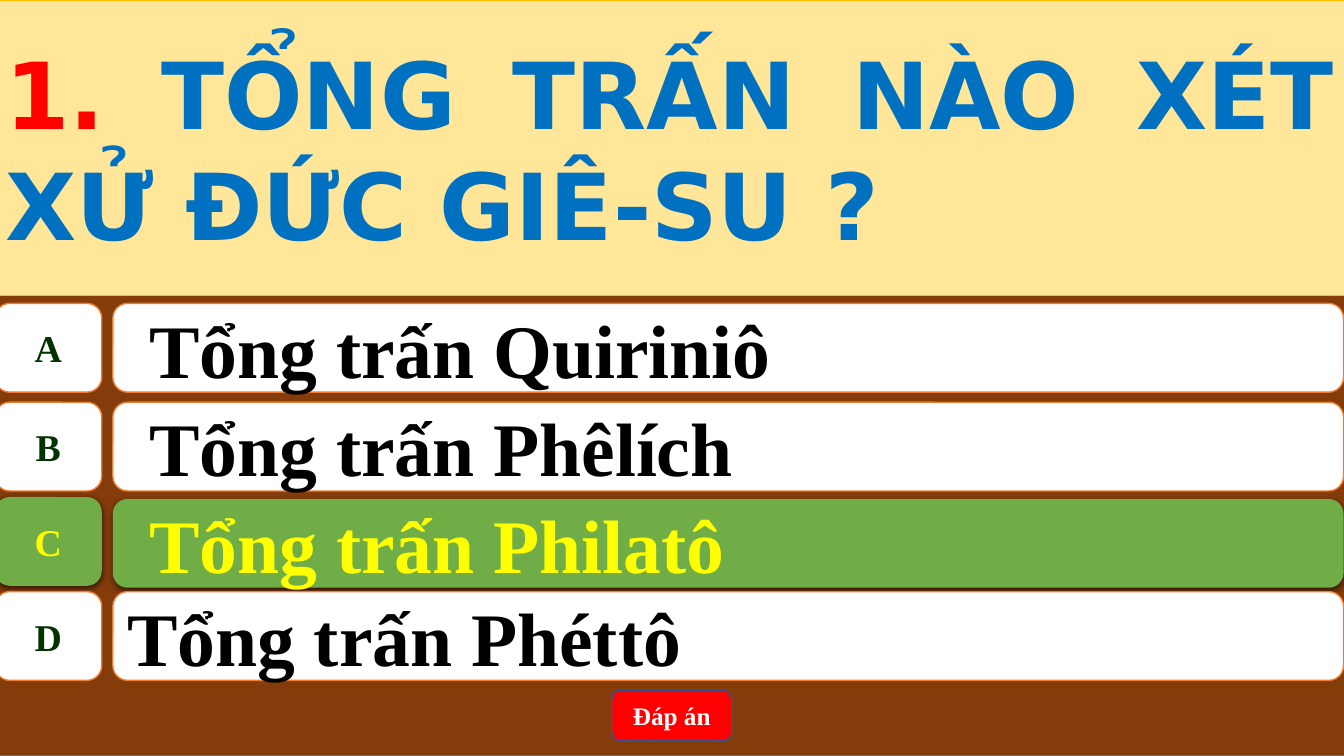
from lxml.etree import SubElement as Sub
from pptx import Presentation
from pptx.dml.color import RGBColor
from pptx.enum.shapes import MSO_SHAPE as Kind
from pptx.enum.text import MSO_ANCHOR as Anchor, MSO_AUTO_SIZE as Auto, PP_ALIGN as Align
from pptx.oxml.ns import qn
from pptx.util import Pt

BROWN = RGBColor(0x84, 0x3C, 0x0B)
STEEL = RGBColor(0x43, 0x73, 0x9E)
CREAM = RGBColor(0xFF, 0xE6, 0x99)
GOLD = RGBColor(0xFF, 0xC0, 0x00)
ORANGE = RGBColor(0xED, 0x7D, 0x31)
WHITE = RGBColor(0xFF, 0xFF, 0xFF)
BLACK = RGBColor(0, 0, 0)
DARK = RGBColor(0x00, 0x33, 0x00)
GREEN = RGBColor(0x70, 0xAD, 0x47)
YELLOW = RGBColor(0xFF, 0xFF, 0x00)
RED = RGBColor(0xFF, 0x00, 0x00)
BLUE = RGBColor(0x00, 0x70, 0xC0)
NAVY = RGBColor(0x32, 0x54, 0x91)
SERIF, SANS = "Times New Roman", "DejaVu Sans"

LEFT, WIDE = -3.6, 964
ROW, BADGE, GAP = 63.4, 76.3, 7.9
# letter, answer, top, drop of the answer bar, indented, correct
ROWS = [
    ("A", "Tổng trấn Quiriniô", 216.7, 0, True, False),
    ("B", "Tổng trấn Phêlích", 287.3, 0, True, False),
    ("C", "Tổng trấn Philatô", 355, 1.4, True, True),
    ("D", "Tổng trấn Phéttô", 422.6, 0, False, False),
]


def paint(shape, fill, line=None, width=1):
    shape.fill.solid()
    shape.fill.fore_color.rgb = fill
    if line is None:
        shape.line.fill.background()
    else:
        shape.line.color.rgb = line
        shape.line.width = Pt(width)


def style(run, size, color, face=SERIF):
    font = run.font
    font.name, font.size, font.bold = face, Pt(size), True
    font.color.rgb = color


def add_box(shapes, kind, box, fill, line=None):
    shape = shapes.add_shape(kind, *map(Pt, box))
    shape.shadow.inherit = False
    paint(shape, fill, line)
    return shape


def write(shape, text, size, color, align):
    frame = shape.text_frame
    frame.vertical_anchor = Anchor.MIDDLE
    frame.word_wrap = True
    para = frame.paragraphs[0]
    para.text, para.alignment = text, align
    style(para.runs[0], size, color)
    return para


def add_glow(shape):
    effects = shape.element.spPr.find(qn("a:effectLst"))
    outer = Sub(effects, qn("a:outerShdw"), blurRad=str(Pt(4.5)),
                dist=str(Pt(1.5)), dir="5400000", rotWithShape="0")
    tint = Sub(outer, qn("a:srgbClr"), val=str(BLACK))
    Sub(tint, qn("a:alpha"), val="63000")


def add_title(slide, box):
    title = slide.shapes.title
    title.left, title.top, title.width, title.height = map(Pt, box)
    paint(title, CREAM, GOLD, 0.5)
    frame = title.text_frame
    frame.word_wrap, frame.auto_size = True, Auto.NONE
    frame.vertical_anchor = Anchor.MIDDLE
    para = frame.paragraphs[0]
    para.alignment = Align.JUSTIFY
    for text, color in (("1. ", RED), ("TỔNG TRẤN NÀO XÉT XỬ ĐỨC GIÊ-SU ?", BLUE)):
        run = para.add_run()
        run.text = text
        style(run, 66, color, SANS)
    # Bring the title in front of the backdrop
    title.element.getparent().append(title.element)


def add_row(slide, box, letter, answer, drop, inset, right):
    left, top, width, height = box
    shapes = slide.shapes.add_group_shape().shapes
    fill, line = (GREEN, None) if right else (WHITE, ORANGE)

    # Answer bar
    start = BADGE + GAP
    bar = add_box(shapes, Kind.ROUNDED_RECTANGLE,
                  (left + start, top + drop, width - start, height), fill, line)
    para = write(bar, answer, 54, YELLOW if right else BLACK, Align.LEFT)
    if inset:
        para.level = 1
        props = para._p.get_or_add_pPr()
        props.set("marL", str(Pt(36)))
        props.set("indent", str(Pt(-20.2)))

    # Letter badge
    badge = add_box(shapes, Kind.FLOWCHART_ALTERNATE_PROCESS,
                    (left, top, BADGE, height), fill, line)
    write(badge, letter, 27, YELLOW if right else DARK, Align.CENTER)
    badge.text_frame.word_wrap = False
    if right:
        add_glow(bar)
        add_glow(badge)


def add_button(slide, box):
    button = add_box(slide.shapes, Kind.ROUNDED_RECTANGLE, box, RED, NAVY)
    write(button, "Đáp án", 18, WHITE, Align.CENTER)


def main():
    deck = Presentation()
    deck.slide_width, deck.slide_height = Pt(960), Pt(540)
    slide = deck.slides.add_slide(deck.slide_layouts[5])
    # Backdrop
    add_box(slide.shapes, Kind.RECTANGLE, (LEFT, 0, WIDE, 540), BROWN, STEEL)
    add_title(slide, (LEFT, 0, WIDE, 211))
    for letter, answer, top, drop, inset, right in ROWS:
        add_row(slide, (LEFT, top, WIDE - 0.7, ROW), letter, answer, drop, inset, right)
    add_button(slide, (437, 493.2, 85.7, 36))
    deck.save("out.pptx")


if __name__ == "__main__":
    main()
